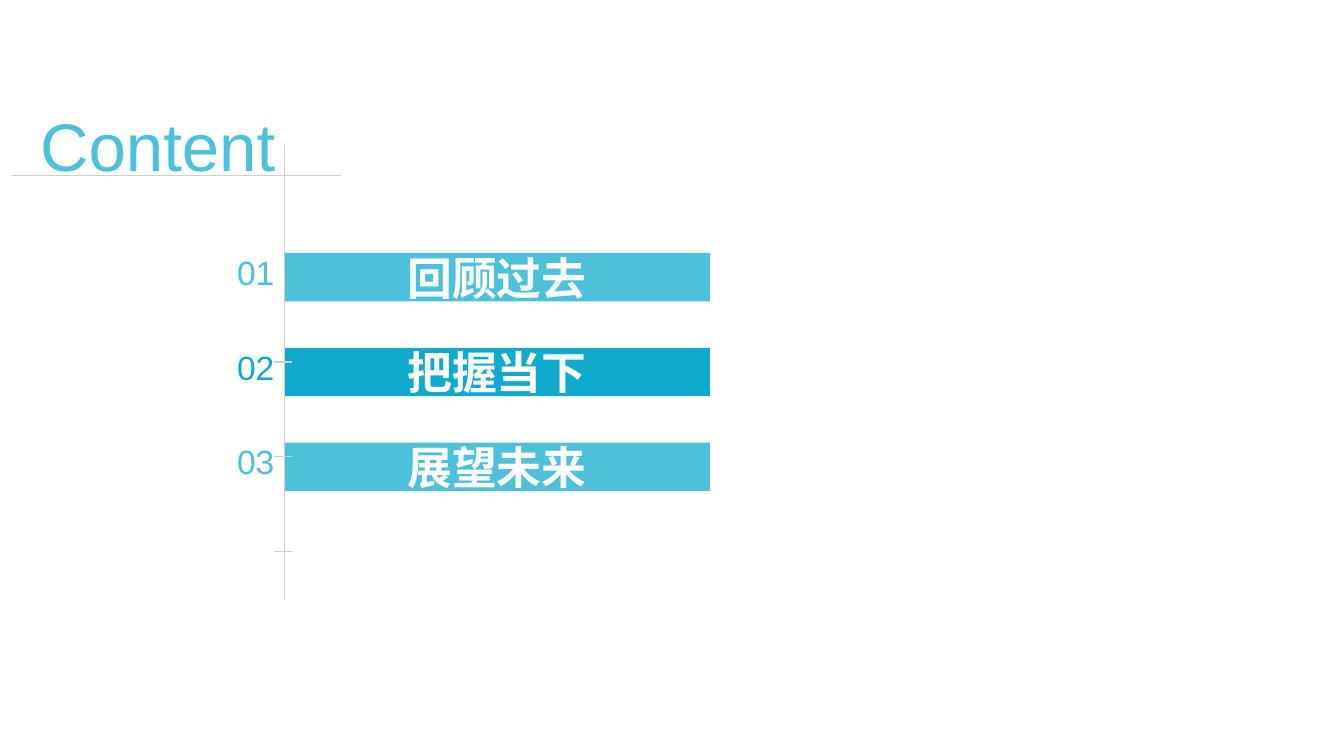
from lxml import etree
from pptx import Presentation
from pptx import util as u
from pptx.dml.color import RGBColor
from pptx.enum import shapes, text
from pptx.oxml.ns import qn

COLORS = {"light": "4DC1D9", "deep": "10AACC", "rule": "CFCFCF", "white": "FFFFFF"}
AXIS_X = 2.82
PITCH = 0.94


class Deck:
    latin = "Arial"
    cjk = "Noto Sans CJK SC"

    def __init__(self):
        self.prs = Presentation()
        self.prs.slide_width = u.Inches(13.33)
        self.prs.slide_height = u.Inches(7.5)
        self.s = self.prs.slides.add_slide(self.prs.slide_layouts[6])

    def color(self, name):
        return RGBColor.from_string(COLORS[name])

    def add_text(self, sp, words, size, color, font, align, anchor, bold=False):
        tf = sp.text_frame
        tf.word_wrap = True
        tf.vertical_anchor = anchor
        p = tf.paragraphs[0]
        p.alignment = align
        r = p.add_run()
        r.text = words
        r.font.size = u.Pt(size)
        r.font.bold = bold
        r.font.name = font
        r.font.color.rgb = self.color(color)
        ea = etree.SubElement(r.font._element, qn("a:ea"))
        ea.set("typeface", font)

    def label(self, words, x, y, w, h, size, color, anchor):
        sp = self.s.shapes.add_textbox(*map(u.Inches, (x, y, w, h)))
        self.add_text(sp, words, size, color, self.latin, text.PP_ALIGN.RIGHT, anchor)

    def bar(self, words, x, y, w, h, color):
        sp = self.s.shapes.add_shape(
            shapes.MSO_SHAPE.RECTANGLE, *map(u.Inches, (x, y, w, h)))
        sp.shadow.inherit = False
        sp.fill.solid()
        sp.fill.fore_color.rgb = self.color(color)
        sp.line.fill.background()
        tf = sp.text_frame
        tf.margin_left = tf.margin_right = tf.margin_top = tf.margin_bottom = 0
        self.add_text(sp, words, 32, "white", self.cjk, text.PP_ALIGN.CENTER,
                      text.MSO_ANCHOR.MIDDLE, bold=True)

    def line(self, x1, y1, x2, y2):
        cn = self.s.shapes.add_connector(
            shapes.MSO_CONNECTOR.STRAIGHT, *map(u.Inches, (x1, y1, x2, y2)))
        cn.line.color.rgb = self.color("rule")
        cn.line.width = u.Pt(1)
        etree.SubElement(cn._element.spPr, qn("a:effectLst"))


def main():
    deck = Deck()
    deck.label("Content", 0.19, 1.14, 2.64, 0.59, 48, "light", text.MSO_ANCHOR.MIDDLE)
    deck.line(0.12, 1.74, 3.38, 1.74)

    chapters = [("回顾过去", "light"), ("把握当下", "deep"), ("展望未来", "light")]
    for i, (title, color) in enumerate(chapters):
        dy = i * PITCH
        deck.label(f"{i + 1:02}", 2.05, 2.45 + dy, 0.77, 0.5, 24, color,
                   text.MSO_ANCHOR.TOP)
        deck.bar(title, AXIS_X, 2.51 + dy, 4.22, 0.48, color)

    deck.line(AXIS_X, 1.44, AXIS_X, 5.95)
    for i in range(len(chapters)):
        y = 3.59 + i * PITCH
        deck.line(2.72, y, 2.9, y)

    deck.prs.save("out.pptx")


if __name__ == "__main__":
    main()
